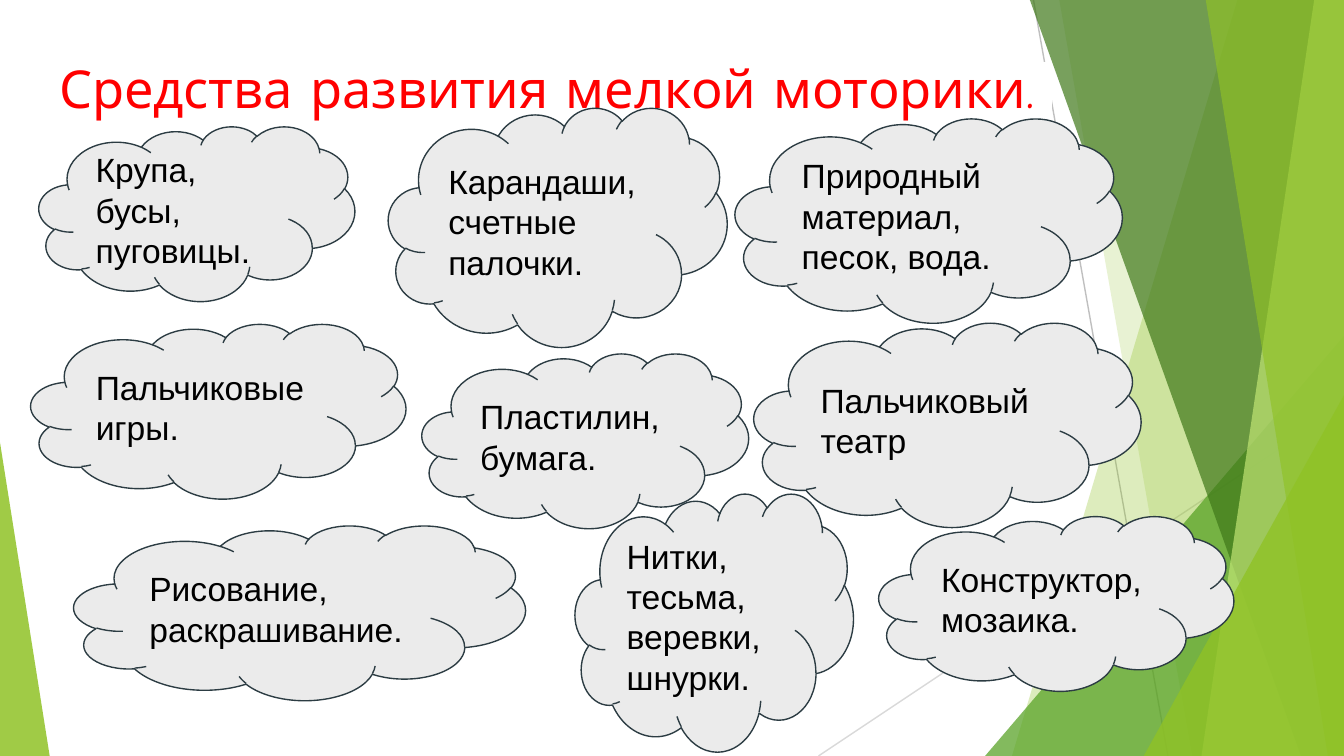
import pptx
import pptx.util
import pptx.dml.color
import pptx.enum.shapes
import pptx.enum.text
import pptx.oxml.ns
from lxml import etree

Inches, Pt = pptx.util.Inches, pptx.util.Pt
SHAPE = pptx.enum.shapes.MSO_SHAPE
ANCHOR = pptx.enum.text.MSO_ANCHOR
qn = pptx.oxml.ns.qn

W = 10
H = W * 9 / 16
COLORS = {
    "red": "FF0000", "black": "000000", "white": "FFFFFF",
    "cloud": "EBEBEB", "outline": "2C3C43",
    "ray": "BFBFBF", "pale_ray": "D9D9D9",
    "green": "90C226", "mid_green": "54A021",
    "dark_green": "3F7819", "light_green": "C0E474",
}
TITLE_FONT = {"size": Pt(28), "name": "Comic Neue", "bold": False}
CLOUD_FONT = {"size": Pt(18), "name": "Arial"}
FRAME = {"word_wrap": True, "auto_size": pptx.enum.text.MSO_AUTO_SIZE.NONE,
         "margin_left": Inches(0.1), "margin_right": Inches(0.1),
         "margin_top": Inches(0.1), "margin_bottom": Inches(0.1)}

# Rays: start x, start y, end x, end y, colour
RAYS = [(7.69, 0, 8.69, H, "ray"), (W, 3.02, 6.09, H, "pale_ray")]

# Green facets, back to front.
# band: top-left x, bottom-left x; triangle: left, top, width, apex position
FACETS = [
    ("band", (9.21, 7.53), "green", 30),
    ("band", (7.88, 8.87), "green", 20),
    ("triangle", (7.33, 2.5, 2.67, 1), "mid_green", 72),
    ("band", (7.66, 9.68), "dark_green", 70),
    ("band", (9.78, 8.94), "light_green", 70),
    ("band", (8.97, 9.88), "green", 65),
    ("triangle", (8.51, 2.94, 1.49, 1), "green", 80),
    ("triangle", (0, 3.29, 0.37, 0), "green", 85),
]

# Clouds: text, left, top, width, height
CLOUDS = [
    ("Крупа, бусы, пуговицы.", 0.29, 0.94, 2.35, 1.3),
    ("Карандаши, счетные палочки.", 2.89, 0.8, 2.52, 1.78),
    ("Природный материал, песок, вода.", 5.47, 0.88, 2.88, 1.52),
    ("Нитки, тесьма, веревки, шнурки.", 4.28, 3.67, 2.07, 1.92),
    ("Пластилин, бумага.", 3.14, 2.63, 2.43, 1.3),
    ("Конструктор, мозаика.", 6.54, 3.84, 2.64, 1.3),
    ("Пальчиковые игры.", 0.23, 2.41, 2.79, 1.3),
    ("Рисование, раскрашивание.", 0.55, 3.91, 3.36, 1.3),
    ("Пальчиковый театр", 5.61, 2.4, 2.88, 1.52),
]


def rgb(name):
    return pptx.dml.color.RGBColor.from_string(COLORS[name])


def apply(target, values):
    for key, value in values.items():
        setattr(target, key, value)


def set_fill(sp, color, alpha=100):
    sp.shadow.inherit = False
    sp.fill.solid()
    sp.fill.fore_color.rgb = rgb(color)
    if alpha < 100:
        clr = sp.element.spPr.find(qn("a:solidFill"))[0]
        etree.SubElement(clr, qn("a:alpha"), val=str(alpha * 1000))


def set_text(sp, text, font, color, anchor):
    tf = sp.text_frame
    apply(tf, FRAME)
    tf.vertical_anchor = anchor
    p = tf.paragraphs[0]
    p.alignment = pptx.enum.text.PP_ALIGN.LEFT
    r = p.add_run()
    r.text = text
    apply(r.font, font)
    r.font.color.rgb = rgb(color)


def add_ray(s, x1, y1, x2, y2, color):
    line = s.shapes.add_connector(pptx.enum.shapes.MSO_CONNECTOR.STRAIGHT,
                                  Inches(x1), Inches(y1), Inches(x2), Inches(y2))
    line.line.color.rgb = rgb(color)
    line.line.width = Pt(0.75)
    etree.SubElement(line.element.spPr, qn("a:effectLst"))


def add_band(s, top_x, bottom_x):
    points = [(W, -0.01), (W, H), (bottom_x, H)]
    builder = s.shapes.build_freeform(Inches(top_x), Inches(-0.01))
    builder.add_line_segments([(Inches(x), Inches(y)) for x, y in points])
    return builder.convert_to_shape()


def add_triangle(s, left, top, width, apex):
    sp = s.shapes.add_shape(SHAPE.ISOSCELES_TRIANGLE, Inches(left), Inches(top),
                            Inches(width), Inches(H - top))
    sp.adjustments[0] = apex
    return sp


def add_facet(s, kind, geometry, color, alpha):
    sp = {"band": add_band, "triangle": add_triangle}[kind](s, *geometry)
    set_fill(sp, color, alpha)
    sp.line.fill.background()


def add_title(s, text):
    sp = s.shapes.title
    s.shapes.element.append(sp.element)  # bring in front of the facets
    apply(sp, {"left": Inches(0.34), "top": Inches(0.32),
               "width": Inches(9.32), "height": Inches(0.88)})
    set_text(sp, text, TITLE_FONT, "red", ANCHOR.TOP)
    # White highlight, placed right after the text fill
    highlight = etree.Element(qn("a:highlight"))
    etree.SubElement(highlight, qn("a:srgbClr"), val=COLORS["white"])
    r_pr = sp.element.find(".//" + qn("a:rPr"))
    r_pr.find(qn("a:solidFill")).addnext(highlight)


def add_cloud(s, text, *box):
    sp = s.shapes.add_shape(SHAPE.CLOUD, *map(Inches, box))
    set_fill(sp, "cloud")
    sp.line.color.rgb = rgb("outline")
    sp.line.width = Pt(0.75)
    set_text(sp, text, CLOUD_FONT, "black", ANCHOR.MIDDLE)


def main():
    prs = pptx.Presentation()
    prs.slide_width, prs.slide_height = Inches(W), Inches(H)
    s = prs.slides.add_slide(prs.slide_layouts[5])

    # Backdrop
    for ray in RAYS:
        add_ray(s, *ray)
    for facet in FACETS:
        add_facet(s, *facet)

    # Content
    add_title(s, "Средства развития мелкой моторики. ")
    for cloud in CLOUDS:
        add_cloud(s, *cloud)

    prs.save("out.pptx")


if __name__ == "__main__":
    main()
